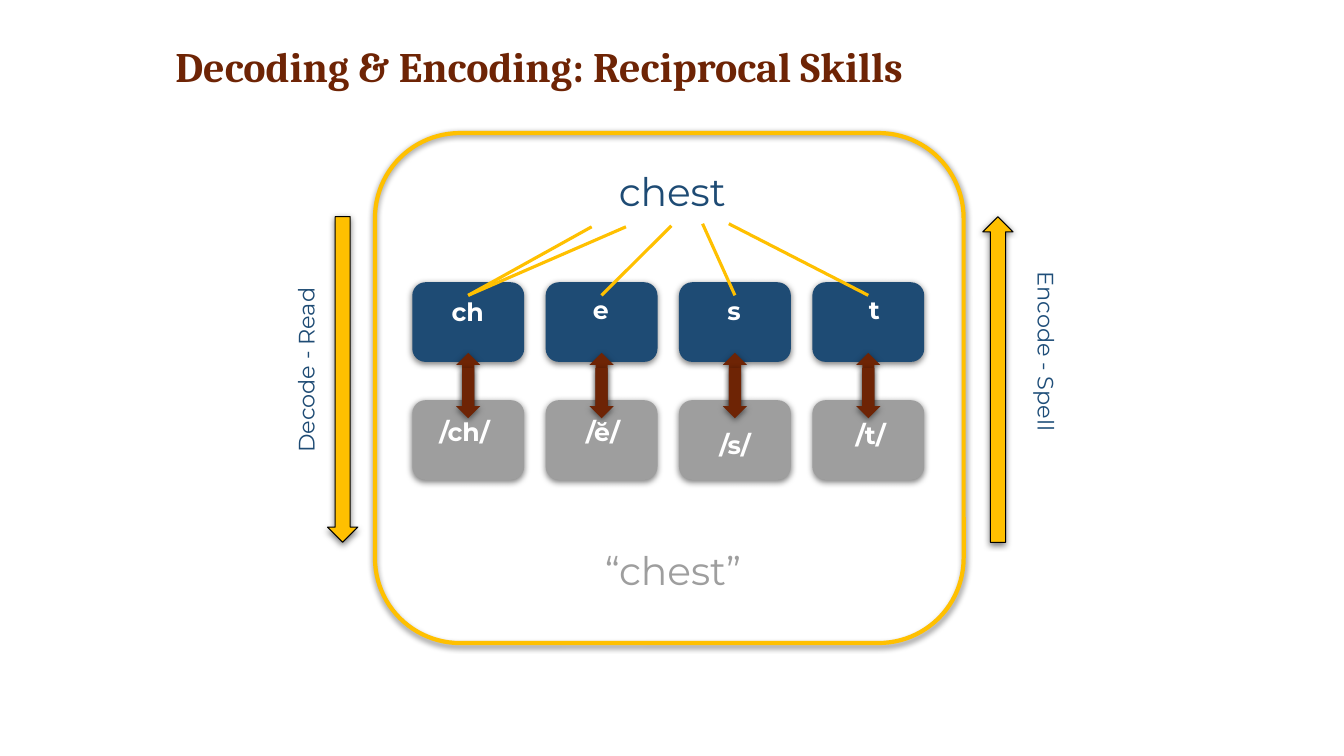
from dataclasses import dataclass

from lxml.etree import SubElement
from pptx import Presentation
from pptx.dml.color import RGBColor
from pptx.enum.shapes import MSO_CONNECTOR, MSO_SHAPE
from pptx.enum.text import MSO_ANCHOR, MSO_AUTO_SIZE, PP_ALIGN
from pptx.oxml.ns import qn
from pptx.util import Inches, Pt

COLUMNS, ROWS = 133.33, 75
STEP = Inches(0.1)


@dataclass(frozen=True)
class Theme:
    """Colours, fonts and type sizes of the slide."""
    brown: str = "6E2405"
    blue: str = "1E4B74"
    encode_blue: str = "1F4E79"
    grey: str = "9E9E9E"
    gold: str = "FFC000"
    white: str = "FFFFFF"
    black: str = "000000"
    heading_font: str = "Cambria"
    body_font: str = "Montserrat"
    heading: int = 30
    word: int = 28
    letter: int = 18
    direction: int = 16


@dataclass(frozen=True)
class Box:
    """An area in grid columns and rows."""
    left: float
    top: float
    width: float
    height: float

    def inner(self, across, down, width, height):
        """Return an area offset from this one's corner."""
        return Box(self.left + across, self.top + down, width, height)

    def lengths(self):
        """Return left, top, width and height in slide units."""
        return [round(n * STEP) for n in (self.left, self.top, self.width, self.height)]


THEME = Theme()


def rgb(colour):
    """Return a colour object for a hex value."""
    return RGBColor.from_string(colour)


def add_shadow(shape):
    """Give a shape a soft shadow straight below it."""
    shape.shadow.inherit = False
    effects = shape._element.spPr.find(qn("a:effectLst"))
    shadow = SubElement(effects, qn("a:outerShdw"), blurRad=str(Pt(4.5)),
                        dist=str(Pt(1.5)), dir="5400000", algn="t", rotWithShape="0")
    tint = SubElement(shadow, qn("a:srgbClr"), val=THEME.black)
    SubElement(tint, qn("a:alpha"), val="49000")


def add_block(slide, kind, box, fill=None, line=None, weight=0.75, turn=0):
    """Draw a shadowed shape with optional fill and outline."""
    block = slide.shapes.add_shape(kind, *box.lengths())
    block.rotation = turn
    if fill:
        block.fill.solid()
        block.fill.fore_color.rgb = rgb(fill)
    else:
        block.fill.background()
    if line:
        block.line.color.rgb = rgb(line)
        block.line.width = Pt(weight)
    else:
        block.line.fill.background()
    add_shadow(block)


def style(paragraph, font_name, size, colour, bold, spacing):
    """Set the type of a left-aligned paragraph."""
    paragraph.alignment = PP_ALIGN.LEFT
    paragraph.line_spacing = spacing
    font = paragraph.font
    font.name, font.size, font.bold = font_name, Pt(size), bold
    font.color.rgb = rgb(colour)


def add_label(slide, box, text, size, colour, bold=False, turn=0):
    """Place one line of body text."""
    label = slide.shapes.add_textbox(*box.lengths())
    label.rotation = turn
    frame = label.text_frame
    frame.word_wrap = True
    frame.margin_left = Inches(0.16)
    frame.text = text
    style(frame.paragraphs[0], THEME.body_font, size, colour, bold, 1.08)


def add_ray(slide, start, end):
    """Draw a gold line between two grid points."""
    ray = slide.shapes.add_connector(
        MSO_CONNECTOR.STRAIGHT, *[round(n * STEP) for n in (*start, *end)])
    ray.line.color.rgb = rgb(THEME.gold)
    ray.line.width = Pt(2.25)
    SubElement(ray._element.spPr, qn("a:effectLst"))


def add_heading(slide, box, text):
    """Fit the title placeholder into its area."""
    title = slide.shapes.title
    title.left, title.top, title.width, title.height = box.lengths()
    frame = title.text_frame
    frame.text = text
    frame.auto_size = MSO_AUTO_SIZE.NONE
    frame.vertical_anchor = MSO_ANCHOR.MIDDLE
    style(frame.paragraphs[0], THEME.heading_font, THEME.heading, THEME.brown, True, 1.15)


def add_word_map(slide, box):
    """Link a word's spelling to its sounds inside a gold frame."""
    add_block(slide, MSO_SHAPE.ROUNDED_RECTANGLE, box, line=THEME.gold, weight=3)
    spellings = [("ch", 2.3, 0.7), ("e", 3.1, 0.5), ("s", 3.2, 0.6), ("t", 4, 0.5)]
    sounds = [("/ch/", 1.1, 0.9), ("/ĕ/", 2.4, 0.9), ("/s/", 2.4, 2.2), ("/t/", 2.7, 1.2)]
    rows = [(14.8, THEME.blue, spellings), (26.5, THEME.grey, sounds)]
    cell_width, cell_height, pitch = 11.1, 7.9, 13.23
    lefts = [3.7 + pitch * column for column in range(len(spellings))]
    centres = [left + cell_width / 2 for left in lefts]

    for top, colour, _ in rows:
        for left in lefts:
            add_block(slide, MSO_SHAPE.ROUNDED_RECTANGLE,
                      box.inner(left, top, cell_width, cell_height), colour)
    for centre in centres:
        for top, height, turn in ((21.8, 5.3, 180), (23.3, 5, 0)):
            add_block(slide, MSO_SHAPE.DOWN_ARROW,
                      box.inner(centre - 1.2, top, 2.4, height), THEME.brown, turn=turn)
    letter_points = [(21.5, 9.3, 0), (24.9, 9.3, 0), (29.4, 9.2, 1), (32.5, 9, 2), (35.1, 9, 3)]
    for across, down, column in letter_points:
        add_ray(slide, (box.left + across, box.top + down),
                (box.left + centres[column], box.top + 16.1))
    for top, _, labels in rows:
        for left, (text, across, down) in zip(lefts, labels):
            add_label(slide, box.inner(left + across, top + down, 9, 5),
                      text, THEME.letter, THEME.white, bold=True)
    add_label(slide, box.inner(22.6, 2.5, 18.1, 13.3), "chest", THEME.word, THEME.blue)
    add_label(slide, box.inner(21.2, 40.1, 24.5, 13.3), "“chest”", THEME.word, THEME.grey)


def add_direction(slide, arrow, label, text, colour, arrow_turn, label_turn):
    """Place a tall arrow and the turned caption beside it."""
    add_block(slide, MSO_SHAPE.DOWN_ARROW, arrow, THEME.gold, THEME.black, turn=arrow_turn)
    add_label(slide, arrow.inner(*label), text, THEME.direction, colour, turn=label_turn)


def main():
    """Build and save the slide."""
    deck = Presentation()
    deck.slide_width, deck.slide_height = round(COLUMNS * STEP), ROWS * STEP
    slide = deck.slides.add_slide(deck.slide_layouts[5])
    add_heading(slide, Box(16.4, 2, 107.8, 8.2), "Decoding & Encoding: Reciprocal Skills")
    add_word_map(slide, Box(37.2, 13.2, 58.4, 50.6))
    add_direction(slide, Box(32.5, 21.5, 3, 32.3), (-13.1, 8.5, 25.4, 7.6),
                  "Decode - Read", THEME.blue, 0, 270)
    add_direction(slide, Box(97.5, 21.5, 3, 32.3), (-7.8, 14.6, 26.9, 5.4),
                  "Encode - Spell", THEME.encode_blue, 180, 90)
    deck.save("out.pptx")


if __name__ == "__main__":
    main()
